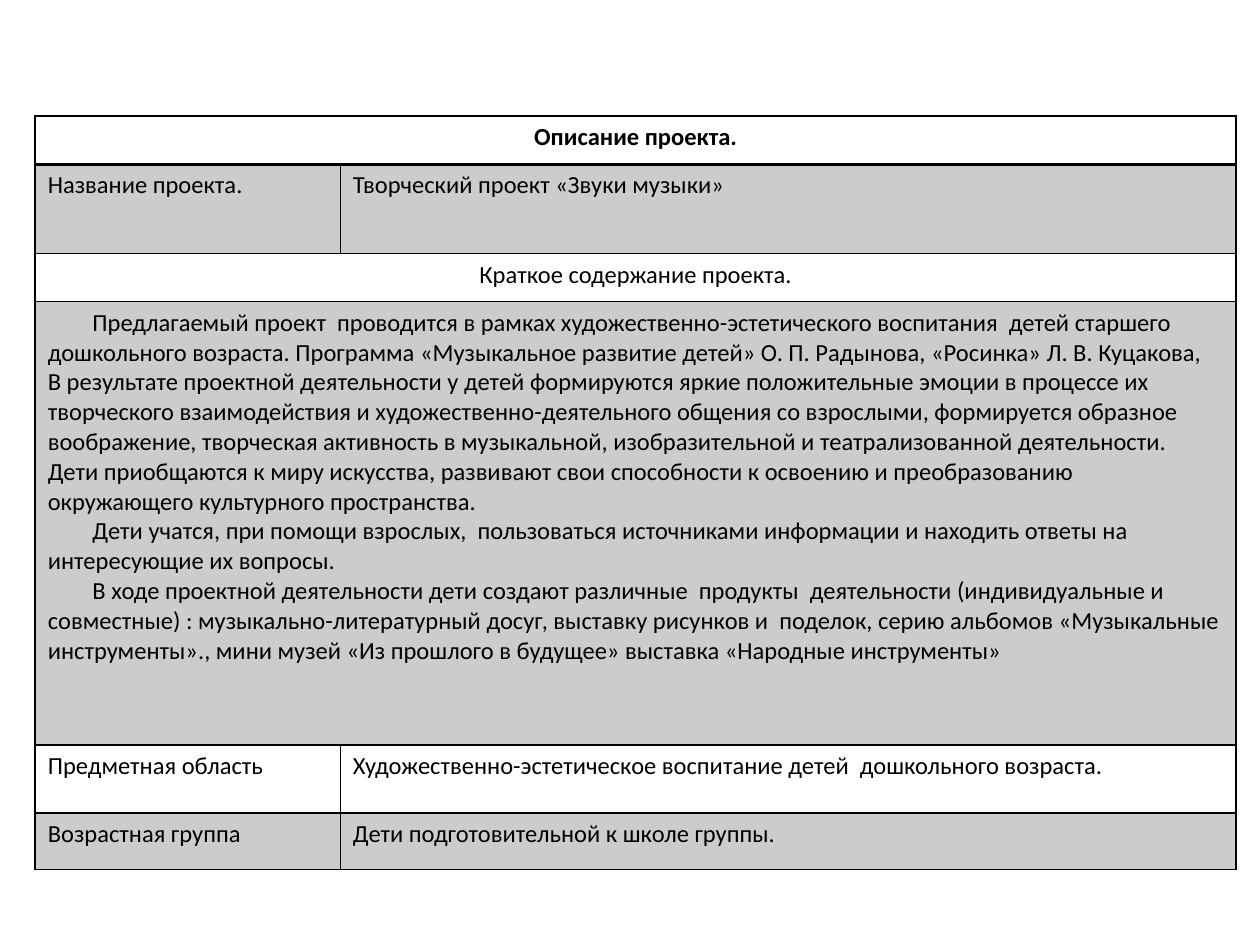
from lxml import etree
from pptx import Presentation
from pptx.dml.color import RGBColor
from pptx.enum.text import PP_ALIGN
from pptx.oxml.ns import qn
from pptx.util import Cm, Pt

LEFT, CENTER = PP_ALIGN.LEFT, PP_ALIGN.CENTER
BLACK = RGBColor(0x00, 0x00, 0x00)
GREY = RGBColor(0xCC, 0xCC, 0xCC)

COLUMNS = [6.15, 18.06]
HEIGHTS = [0.97, 1.8, 0.97, 8.94, 1.37, 1.14]
HEADINGS = (0, 2)
INDENT = "\t"
SUMMARY = [
    INDENT + "Предлагаемый проект  проводится в рамках художественно-эстетического воспитания  детей "
    "старшего дошкольного возраста. Программа «Музыкальное развитие детей» О. П. Радынова, "
    "«Росинка» Л. В. Куцакова,",
    "В результате проектной деятельности у детей формируются яркие положительные эмоции в процессе "
    "их творческого взаимодействия и художественно-деятельного общения со взрослыми, формируется "
    "образное воображение, творческая активность в музыкальной, изобразительной и "
    "театрализованной деятельности.",
    "Дети приобщаются к миру искусства, развивают свои способности к освоению и преобразованию "
    "окружающего культурного пространства.",
    INDENT + "Дети учатся, при помощи взрослых,  пользоваться источниками информации и находить "
    "ответы на интересующие их вопросы.",
    INDENT + "В ходе проектной деятельности дети создают различные  продукты  деятельности "
    "(индивидуальные и совместные) : музыкально-литературный досуг, выставку рисунков и  поделок, "
    "серию альбомов «Музыкальные инструменты»., мини музей «Из прошлого в будущее» выставка "
    "«Народные инструменты»",
]
ROWS = [
    [["Описание проекта."]],
    [["Название проекта."], ["Творческий проект «Звуки музыки»"]],
    [["Краткое содержание проекта."]],
    [SUMMARY],
    [["Предметная область"], ["Художественно-эстетическое воспитание детей  дошкольного возраста."]],
    [["Возрастная группа"], ["Дети подготовительной к школе группы."]],
]


class Deck:
    """Holds the table style and the current slide."""

    font, size, indent = "Calibri", Pt(14), Cm(0.9)

    def __init__(self, prs):
        self.s = prs.slides.add_slide(prs.slide_layouts[6])

    def border(self, cell, side, width):
        tcPr = cell._tc.get_or_add_tcPr()
        ln = etree.SubElement(tcPr, qn(f"a:ln{side}"), w=str(Pt(width)))
        fill = etree.SubElement(ln, qn("a:solidFill"))
        etree.SubElement(fill, qn("a:srgbClr"), val=str(BLACK))

    def text(self, cell, lines, align, bold):
        tf = cell.text_frame
        for i, line in enumerate(lines):
            p = tf.add_paragraph() if i else tf.paragraphs[0]
            p.text = line.lstrip(INDENT)
            p.alignment = align
            if line.startswith(INDENT):
                pPr = p._p.get_or_add_pPr()
                pPr.set("marL", "0")
                pPr.set("indent", str(self.indent))
            p.font.name, p.font.size, p.font.bold = self.font, self.size, bold
            p.font.color.rgb = BLACK

    def table(self, left, top, columns, heights, rows):
        table = self.s.shapes.add_table(
            len(rows), len(columns), Cm(left), Cm(top), Cm(sum(columns)), Cm(sum(heights))
        ).table
        table.first_row = table.horz_banding = False
        for column, width in zip(table.columns, columns):
            column.width = Cm(width)
        for i, (row, height) in enumerate(zip(rows, heights)):
            table.rows[i].height = Cm(height)
            for cell in table.rows[i].cells:
                for side in "LRTB":
                    self.border(cell, side, 2 if (i, side) in ((0, "B"), (1, "T")) else 1)
                if i % 2:
                    cell.fill.solid()
                    cell.fill.fore_color.rgb = GREY
                else:
                    cell.fill.background()
            if len(row) == 1:
                table.cell(i, 0).merge(table.cell(i, len(columns) - 1))
            for j, lines in enumerate(row):
                self.text(table.cell(i, j), lines, CENTER if i in HEADINGS else LEFT, i == 0)


def main():
    prs = Presentation()
    prs.slide_width, prs.slide_height = Cm(25.4), Cm(19.05)
    Deck(prs).table(0.71, 2.34, COLUMNS, HEIGHTS, ROWS)
    prs.save("out.pptx")


if __name__ == "__main__":
    main()
